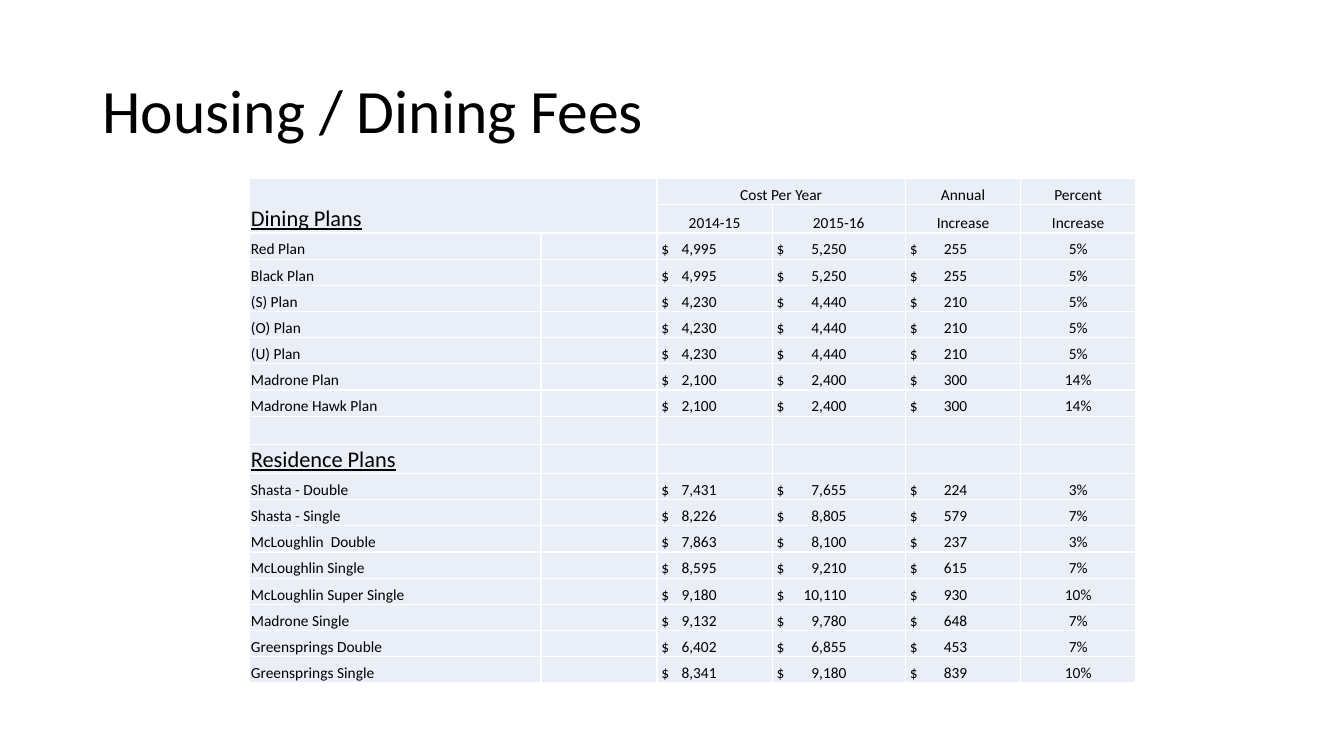
"""Build the housing and dining fees slide."""
from dataclasses import dataclass

from lxml.etree import SubElement
from pptx import Presentation
from pptx.dml.color import RGBColor
from pptx.enum.text import MSO_ANCHOR as ANCHOR, MSO_AUTO_SIZE as FIT, PP_ALIGN as ALIGN
from pptx.oxml.ns import qn
from pptx.table import Table, _Cell as Cell
from pptx.util import Pt

FONT, INK, CELL_FILL, RULE = "Calibri", "000000", "EAEFF7", "FFFFFF"
COL_WIDTHS = (208, 82.8, 82.3, 95.2, 82.3, 82.3)
AMOUNT_TABS = {2: 42, 3: 52.5, 4: 43.5}
ROW_HEIGHT, TALL_ROWS = 18.7, {1: 20, 9: 20, 10: 20.8}
BLANK_ROW = 9
CELL_FORMAT = {"margin_left": Pt(0.7), "margin_right": Pt(0.7), "margin_top": Pt(0.7),
               "margin_bottom": Pt(0), "vertical_anchor": ANCHOR.BOTTOM}
TITLE_FORMAT = {"left": Pt(66), "top": Pt(28.75), "width": Pt(828), "height": Pt(104.4)}


@dataclass(frozen=True)
class Plan:
    name: str
    cost_2014: int
    cost_2015: int


@dataclass(frozen=True)
class Label:
    row: int
    col: int
    text: str
    size: float = 11
    underline: bool = False
    align: ALIGN = ALIGN.CENTER


LABELS = (
    Label(0, 0, "Dining Plans", 16, True, ALIGN.LEFT),
    Label(0, 2, "Cost Per Year"),
    Label(0, 4, "Annual"),
    Label(0, 5, "Percent"),
    Label(1, 2, "2014-15"),
    Label(1, 3, "2015-16"),
    Label(1, 4, "Increase"),
    Label(1, 5, "Increase"),
    Label(10, 0, "Residence Plans", 16, True, ALIGN.LEFT),
)
DINING_PLANS = (
    Plan("Red Plan", 4995, 5250),
    Plan("Black Plan", 4995, 5250),
    Plan("(S) Plan", 4230, 4440),
    Plan("(O) Plan", 4230, 4440),
    Plan("(U) Plan", 4230, 4440),
    Plan("Madrone Plan", 2100, 2400),
    Plan("Madrone Hawk Plan", 2100, 2400),
)
RESIDENCE_PLANS = (
    Plan("Shasta - Double", 7431, 7655),
    Plan("Shasta - Single", 8226, 8805),
    Plan("McLoughlin  Double", 7863, 8100),
    Plan("McLoughlin Single", 8595, 9210),
    Plan("McLoughlin Super Single", 9180, 10110),
    Plan("Madrone Single", 9132, 9780),
    Plan("Greensprings Double", 6402, 6855),
    Plan("Greensprings Single", 8341, 9180),
)
SECTIONS = {2: DINING_PLANS, 11: RESIDENCE_PLANS}


def rgb(value: str) -> RGBColor:
    return RGBColor.from_string(value)


def apply(target: object, values: dict) -> None:
    for name, value in values.items():
        setattr(target, name, value)


def write(p, text: str, size: float, underline: bool = False) -> None:
    r = p.add_run()
    r.text = text
    apply(r.font, {"name": FONT, "size": Pt(size), "underline": underline})
    r.font.color.rgb = rgb(INK)


def style_cell(cell: Cell, empty_size: float) -> None:
    apply(cell, CELL_FORMAT)
    tc_pr = cell._tc.get_or_add_tcPr()
    for side in ("lnL", "lnR", "lnT", "lnB"):
        line = SubElement(tc_pr, qn(f"a:{side}"), w=str(Pt(1)))
        SubElement(SubElement(line, qn("a:solidFill")), qn("a:srgbClr"), val=RULE)
    cell.fill.solid()
    cell.fill.fore_color.rgb = rgb(CELL_FILL)
    p = cell.text_frame.paragraphs[0]
    SubElement(p._p, qn("a:endParaRPr"), sz=str(empty_size * 100))


def draw_label(tbl: Table, label: Label) -> None:
    p = tbl.cell(label.row, label.col).text_frame.paragraphs[0]
    p.alignment = label.align
    write(p, label.text, label.size, label.underline)


def draw_amount(tbl: Table, row: int, col: int, amount: int) -> None:
    p = tbl.cell(row, col).text_frame.paragraphs[0]
    tabs = SubElement(p._p.get_or_add_pPr(), qn("a:tabLst"))
    SubElement(tabs, qn("a:tab"), pos=str(Pt(AMOUNT_TABS[col])), algn="r")
    write(p, f" $\t{amount:,}", 11)


def draw_plan(tbl: Table, row: int, plan: Plan) -> None:
    increase = plan.cost_2015 - plan.cost_2014
    draw_label(tbl, Label(row, 0, plan.name, align=ALIGN.LEFT))
    for col, amount in zip(AMOUNT_TABS, (plan.cost_2014, plan.cost_2015, increase)):
        draw_amount(tbl, row, col, amount)
    draw_label(tbl, Label(row, 5, f"{increase / plan.cost_2014:.0%}"))


def draw_title(s) -> None:
    title = s.shapes.title
    apply(title, TITLE_FORMAT)
    tf = title.text_frame
    apply(tf, {"word_wrap": True, "auto_size": FIT.NONE, "vertical_anchor": ANCHOR.MIDDLE})
    p = tf.paragraphs[0]
    apply(p, {"alignment": ALIGN.LEFT, "line_spacing": 0.9})
    write(p, "Housing / Dining Fees", 44)


def draw_fees(s) -> None:
    heights = [TALL_ROWS.get(i, ROW_HEIGHT) for i in range(19)]
    tbl = s.shapes.add_table(len(heights), len(COL_WIDTHS), Pt(178.5), Pt(127.5),
                             Pt(sum(COL_WIDTHS)), Pt(sum(heights))).table
    apply(tbl, {"first_row": False, "horz_banding": False})
    for column, width in zip(tbl.columns, COL_WIDTHS):
        column.width = Pt(width)
    for i, (row, height) in enumerate(zip(tbl.rows, heights)):
        row.height = Pt(height)
        for cell in row.cells:
            style_cell(cell, 16 if i == BLANK_ROW else 11)
    tbl.cell(0, 0).merge(tbl.cell(1, 1))
    tbl.cell(0, 2).merge(tbl.cell(0, 3))
    for label in LABELS:
        draw_label(tbl, label)
    for first_row, plans in SECTIONS.items():
        for row, plan in enumerate(plans, first_row):
            draw_plan(tbl, row, plan)


def main() -> None:
    prs = Presentation()
    apply(prs, {"slide_width": Pt(960), "slide_height": Pt(540)})
    s = prs.slides.add_slide(prs.slide_layouts[5])
    draw_title(s)
    draw_fees(s)
    prs.save("out.pptx")


if __name__ == "__main__":
    main()
